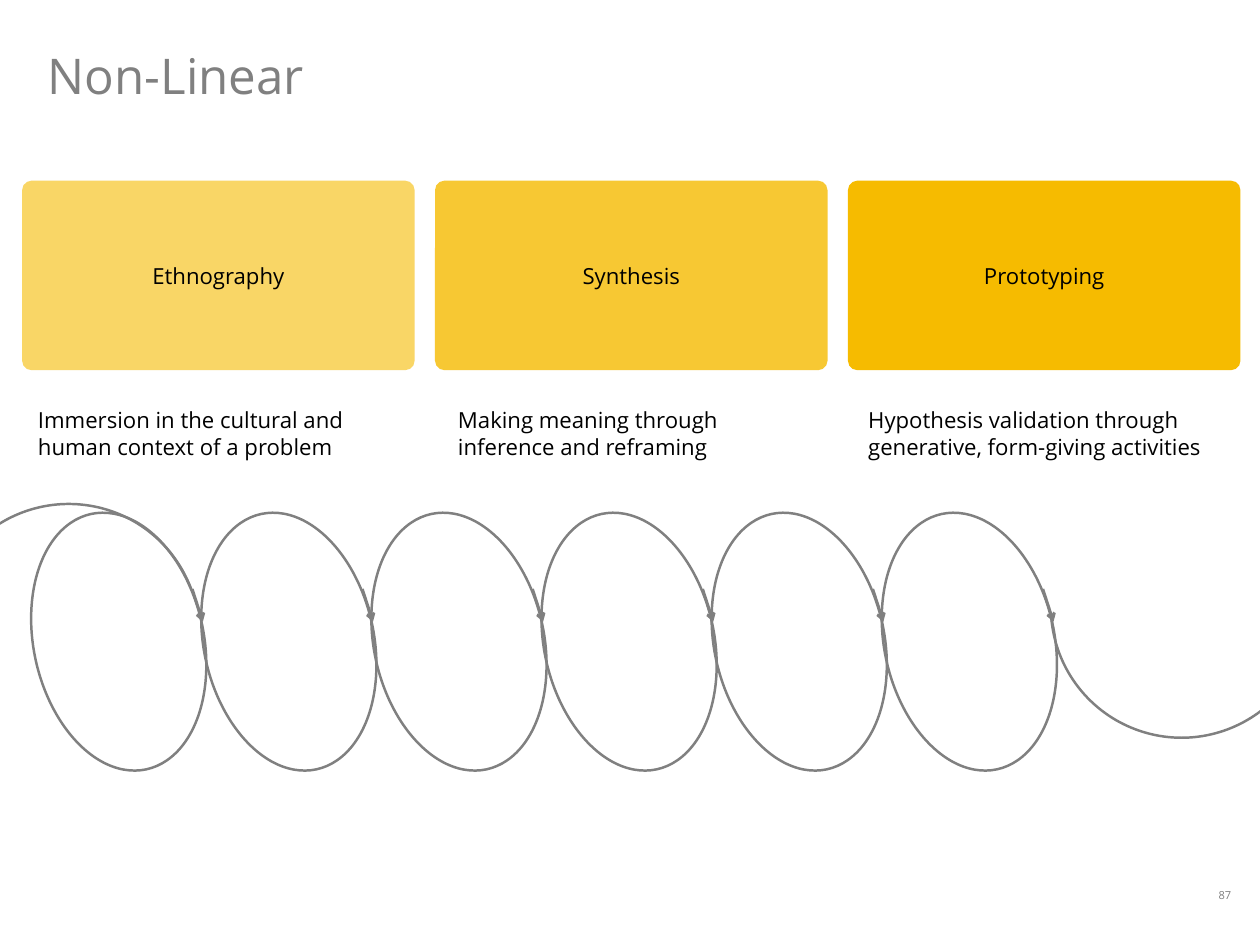
from dataclasses import dataclass
from typing import Optional

import pptx
import pptx.dml.color
import pptx.enum.shapes
import pptx.enum.text
import pptx.oxml
import pptx.oxml.ns
import pptx.util

Rgb = pptx.dml.color.RGBColor
Kind = pptx.enum.shapes.MSO_SHAPE
Align = pptx.enum.text.PP_ALIGN
Anchor = pptx.enum.text.MSO_ANCHOR
Fit = pptx.enum.text.MSO_AUTO_SIZE

SCALE = 9144
FONT = "Open Sans"
GREY = Rgb(0x80, 0x80, 0x80)
WHITE = Rgb(0xFF, 0xFF, 0xFF)
BLACK = Rgb(0, 0, 0)
GOLD = Rgb(0xF6, 0xBB, 0x00)
STEP = 192
LOOPS = 6
CARD_STEP = 466


@dataclass(frozen=True)
class Box:
    left: int
    top: int
    width: int
    height: int

    def emu(self) -> list[int]:
        return [n * SCALE for n in (self.left, self.top, self.width, self.height)]


@dataclass(frozen=True)
class Ring:
    box: Box
    line: Rgb
    fill: Optional[Rgb] = None
    turn: float = 0


@dataclass(frozen=True)
class Phase:
    name: str
    note: str
    left: int
    alpha: int


@dataclass(frozen=True)
class Label:
    text: str
    box: Box
    size: int
    color: Rgb
    frame: dict
    align: Align = Align.LEFT


RINGS = [
    Ring(Box(1186, 538, 295, 295), GREY),
    Ring(Box(1180, 496, 295, 295), WHITE, WHITE),
    Ring(Box(-70, 569, 295, 295), GREY, WHITE),
    Ring(Box(-53, 606, 295, 295), WHITE, WHITE),
]
PHASES = [
    Phase("Ethnography", "Immersion in the cultural and human context of a problem", 33, 60),
    Phase("Synthesis", "Making meaning through inference and reframing", 507, 80),
    Phase("Prototyping", "Hypothesis validation through generative, form-giving activities", 970, 100),
]
BARE = dict.fromkeys(("margin_left", "margin_top", "margin_right", "margin_bottom"), 0)
MID = {"word_wrap": True, "vertical_anchor": Anchor.MIDDLE}
GROW = {"word_wrap": True, "auto_size": Fit.SHAPE_TO_FIT_TEXT}
LABELS = [
    Label("Non-Linear", Box(54, 51, 1267, 67), 40, GREY, MID | GROW | BARE),
    Label("87", Box(1357, 998, 51, 30), 9, GREY, {"word_wrap": True}, Align.CENTER),
]


def style(item: object, form: dict) -> None:
    for key, value in form.items():
        setattr(item, key, value)


def write(shape, label: Label) -> None:
    style(shape.text_frame, label.frame)
    para = shape.text_frame.paragraphs[0]
    style(para, {"text": label.text, "alignment": label.align})
    font = para.runs[0].font
    style(font, {"name": FONT, "size": pptx.util.Pt(label.size)})
    font.color.rgb = label.color


def add_ring(slide, ring: Ring) -> None:
    shape = slide.shapes.add_shape(Kind.OVAL, *ring.box.emu())
    shape.shadow.inherit = False
    shape.rotation = ring.turn
    if ring.fill is None:
        shape.fill.background()
    else:
        shape.fill.solid()
        shape.fill.fore_color.rgb = ring.fill
    shape.line.color.rgb = ring.line
    shape.line.width = pptx.util.Pt(2)


def add_arrow(slide, left: int) -> None:
    ends = [n * SCALE for n in (left, 665, left + 12, 702)]
    arrow = slide.shapes.add_connector(pptx.enum.shapes.MSO_CONNECTOR.STRAIGHT, *ends)
    arrow.line.color.rgb = GREY
    arrow.line.width = pptx.util.Pt(2.25)
    tail = pptx.oxml.ns.qn("a:tailEnd")
    arrow.line._get_or_add_ln().append(pptx.oxml.parse_xml(
        f'<a:tailEnd {pptx.oxml.ns.nsdecls("a")} type="arrow"/>'))
    arrow._element.spPr.append(pptx.oxml.parse_xml(
        f'<a:effectLst {pptx.oxml.ns.nsdecls("a")}/>'))


def add_label(slide, label: Label) -> None:
    write(slide.shapes.add_textbox(*label.box.emu()), label)


def add_phase(slide, phase: Phase, index: int) -> None:
    box = Box(25 + index * CARD_STEP, 204, 443, 214)
    card = slide.shapes.add_shape(Kind.ROUNDED_RECTANGLE, *box.emu())
    card.shadow.inherit = False
    card.adjustments[0] = 0.05
    card.line.fill.background()
    card.fill.solid()
    card.fill.fore_color.rgb = GOLD
    if phase.alpha < 100:
        tint = card._element.spPr.find(".//" + pptx.oxml.ns.qn("a:srgbClr"))
        tint.append(pptx.oxml.parse_xml(
            f'<a:alpha {pptx.oxml.ns.nsdecls("a")} val="{phase.alpha * 1000}"/>'))
    write(card, Label(phase.name, box, 18, BLACK, MID, Align.CENTER))
    add_label(slide, Label(phase.note, Box(phase.left, 454, 402, 71), 18, BLACK, GROW))


def main() -> None:
    deck = pptx.Presentation()
    style(deck, {"slide_width": 1422 * SCALE, "slide_height": 1067 * SCALE})
    slide = deck.slides.add_slide(deck.slide_layouts[6])
    for ring in RINGS:
        add_ring(slide, ring)
    for index in range(LOOPS):
        left = index * STEP
        add_arrow(slide, 217 + left)
        add_ring(slide, Ring(Box(38 + left, 577, 192, 295), GREY, turn=347.8))
    for index, phase in enumerate(PHASES):
        add_phase(slide, phase, index)
    for label in LABELS:
        add_label(slide, label)
    deck.save("out.pptx")


if __name__ == "__main__":
    main()
